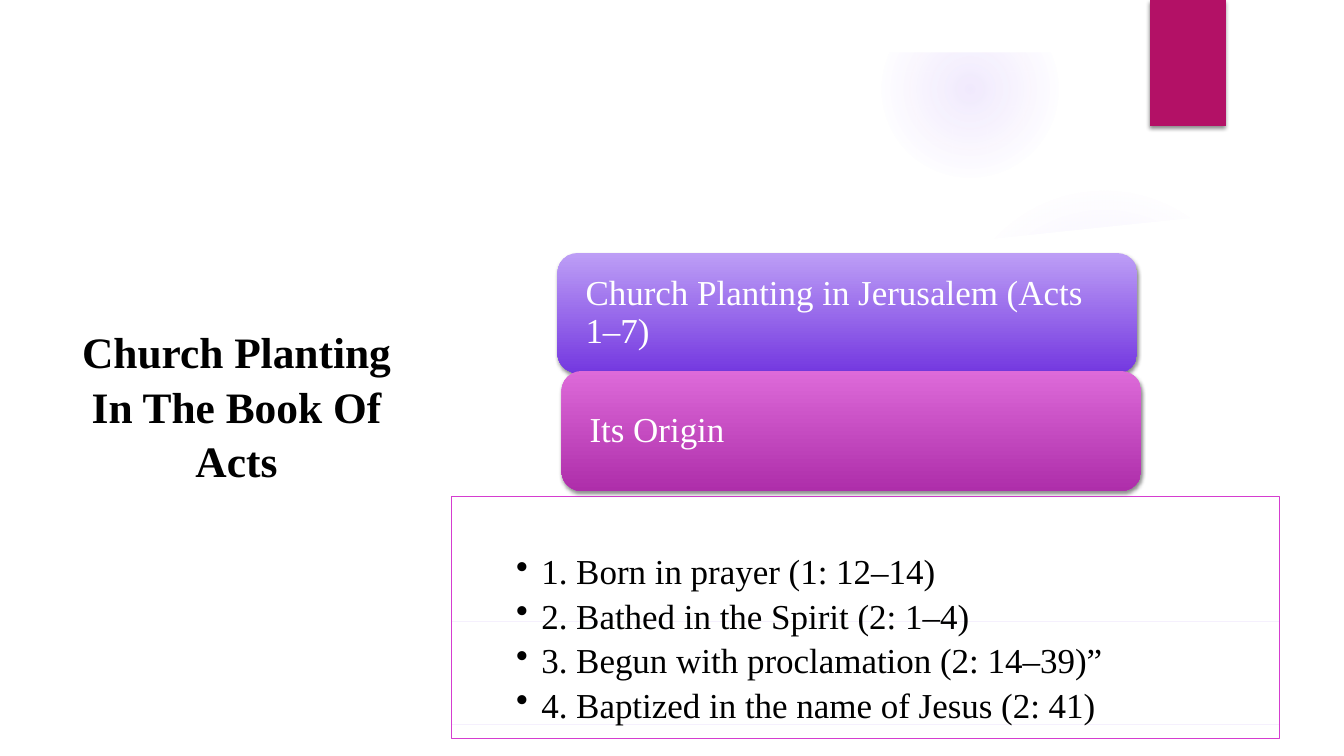
from dataclasses import dataclass

from lxml.etree import SubElement
from pptx import Presentation
from pptx.dml.color import RGBColor
from pptx.enum.shapes import MSO_SHAPE
from pptx.enum.text import MSO_ANCHOR, PP_ALIGN
from pptx.oxml import parse_xml
from pptx.oxml.ns import nsdecls, qn
from pptx.util import Inches, Pt

WIDTH, HEIGHT = Inches(13.33), Inches(7.5)


@dataclass(frozen=True)
class Theme:
    font: str = "Times New Roman"
    title_size: float = 31
    body_size: float = 25
    ink: str = "000000"
    paper: str = "FFFFFF"
    violet: str = "9B6BF2"
    magenta: str = "D53DD0"
    ribbon: str = "B31166"
    violet_card: tuple = ("BD9EF6", "7438E0")
    magenta_card: tuple = ("DD6AD9", "AE2EAA")


THEME = Theme()


def across(percent):
    return round(WIDTH * percent / 100)


def down(percent):
    return round(HEIGHT * percent / 100)


def area(left, top, width, height):
    """Turn percentages of the slide into a position and a size."""
    return across(left), down(top), across(width), down(height)


def add_plain(slide, kind, place, color=None):
    shape = slide.shapes.add_shape(kind, *area(*place))
    shape.shadow.inherit = False
    shape.line.fill.background()
    if color:
        shape.fill.solid()
        shape.fill.fore_color.rgb = RGBColor.from_string(color)
    return shape


def add_shadow(shape):
    effects = shape._element.spPr.find(qn("a:effectLst"))
    shadow = SubElement(effects, qn("a:outerShdw"), blurRad=str(Pt(3)),
                        dist=str(Pt(2)), dir="5400000", rotWithShape="0")
    color = SubElement(shadow, qn("a:srgbClr"), val="000000")
    SubElement(color, qn("a:alpha"), val="45000")


def add_glow(slide, place, stops):
    """Draw a circle that fades out; stops are (position, opacity) in percent."""
    glow = add_plain(slide, MSO_SHAPE.OVAL, place)
    stop_xml = "".join(
        f'<a:gs pos="{position * 1000}"><a:srgbClr val="{THEME.violet}">'
        f'<a:alpha val="{opacity * 1000}"/></a:srgbClr></a:gs>'
        for position, opacity in stops)
    gradient = parse_xml(
        f'<a:gradFill {nsdecls("a")}><a:gsLst>{stop_xml}</a:gsLst>'
        '<a:path path="circle"><a:fillToRect l="50000" t="50000" r="50000" b="50000"/>'
        '</a:path></a:gradFill>')
    glow._element.spPr.find(qn("a:prstGeom")).addnext(gradient)


def add_page(slide, corners):
    """Draw the white sheet whose upper edge cuts the lower glow."""
    points = [(across(x), down(y)) for x, y in corners]
    builder = slide.shapes.build_freeform(*points[0])
    builder.add_line_segments(points[1:])
    page = builder.convert_to_shape()
    page.shadow.inherit = False
    page.fill.solid()
    page.fill.fore_color.rgb = RGBColor.from_string(THEME.paper)
    page.line.fill.background()


def add_panel(slide, place, outline):
    panel = add_plain(slide, MSO_SHAPE.RECTANGLE, place, THEME.paper)
    color = panel._element.spPr.find(qn("a:solidFill"))[0]
    SubElement(color, qn("a:alpha"), val="90000")
    panel.line.color.rgb = RGBColor.from_string(outline)
    panel.line.width = Pt(0.75)
    return panel


def write(shape, lines, size, color, insets, anchor, bold=False, bullet=False, **layout):
    """Fill a shape with paragraphs; insets are left, top, right, bottom in inches."""
    frame = shape.text_frame
    frame.word_wrap = True
    frame.vertical_anchor = anchor
    for side, inset in zip(("left", "top", "right", "bottom"), insets):
        setattr(frame, f"margin_{side}", Inches(inset))
    for index, line in enumerate(lines):
        paragraph = frame.paragraphs[0] if index == 0 else frame.add_paragraph()
        for name, value in layout.items():
            setattr(paragraph, name, value)
        if bullet:
            properties = paragraph._p.get_or_add_pPr()
            properties.set("marL", str(Inches(0.25)))
            properties.set("indent", str(-Inches(0.25)))
            SubElement(properties, qn("a:buChar"), char="•")
        run = paragraph.add_run()
        run.text = line
        run.font.color.rgb = RGBColor.from_string(color)
        for name, value in {"name": THEME.font, "size": Pt(size), "bold": bold}.items():
            setattr(run.font, name, value)


def add_card(slide, left, top, colors, heading):
    card = add_plain(slide, MSO_SHAPE.ROUNDED_RECTANGLE, (left, top, 43.13, 15.87))
    card.fill.gradient()
    card.fill.gradient_angle = 270
    for stop, position, color in zip(card.fill.gradient_stops, (0, 1), colors):
        stop.position = position
        stop.color.rgb = RGBColor.from_string(color)
    add_shadow(card)
    write(card, [heading], THEME.body_size, THEME.paper, (0.22, 0, 0.22, 0),
          MSO_ANCHOR.MIDDLE, alignment=PP_ALIGN.LEFT, line_spacing=0.9)


def add_backdrop(slide):
    add_glow(slide, (70.58, 24.4, 23.1, 41.07), [(0, 7), (36, 6), (69, 0)])
    add_glow(slide, (65.63, 0.13, 13.13, 23.33), [(0, 14), (36, 7), (73, 0)])
    add_page(slide, [(3.75, 33), (70, 33), (73.3, 31.7), (88.9, 28.8),
                     (96.3, 27), (96.3, 93.3), (3.75, 93.3)])
    add_plain(slide, MSO_SHAPE.RECTANGLE, (0, 0, 100, 6.93), THEME.paper)
    add_shadow(add_plain(slide, MSO_SHAPE.RECTANGLE, (85.58, 0, 5.63, 16.67), THEME.ribbon))


def add_title(slide, text):
    title = slide.shapes.add_textbox(*area(4.8, 39.2, 25.58, 32.67))
    write(title, [text], THEME.title_size, THEME.ink, (0.1, 0.05, 0.1, 0.57),
          MSO_ANCHOR.BOTTOM, bold=True, alignment=PP_ALIGN.CENTER, line_spacing=1.04)


def main():
    deck = Presentation()
    deck.slide_width, deck.slide_height = WIDTH, HEIGHT
    slide = deck.slides.add_slide(deck.slide_layouts[6])

    add_backdrop(slide)
    add_title(slide, "Church Planting In The Book Of Acts")
    add_panel(slide, (33.6, 82.27, 61.58, 13.6), THEME.violet)
    add_card(slide, 41.48, 33.47, THEME.violet_card, "Church Planting in Jerusalem (Acts 1–7)")
    origins = add_panel(slide, (33.6, 65.73, 61.58, 32), THEME.magenta)
    write(origins, [
        "1. Born in prayer (1: 12–14)",
        "2. Bathed in the Spirit (2: 1–4)",
        "3. Begun with proclamation (2: 14–39)”",
        "4. Baptized in the name of Jesus (2: 41)",
    ], THEME.body_size, THEME.ink, (0.64, 0.57, 0.64, 0.19), MSO_ANCHOR.TOP, bullet=True,
        alignment=PP_ALIGN.LEFT, level=1, line_spacing=0.9, space_after=Pt(4.8))
    add_card(slide, 41.78, 49.07, THEME.magenta_card, "Its Origin")
    deck.save("out.pptx")


if __name__ == "__main__":
    main()
